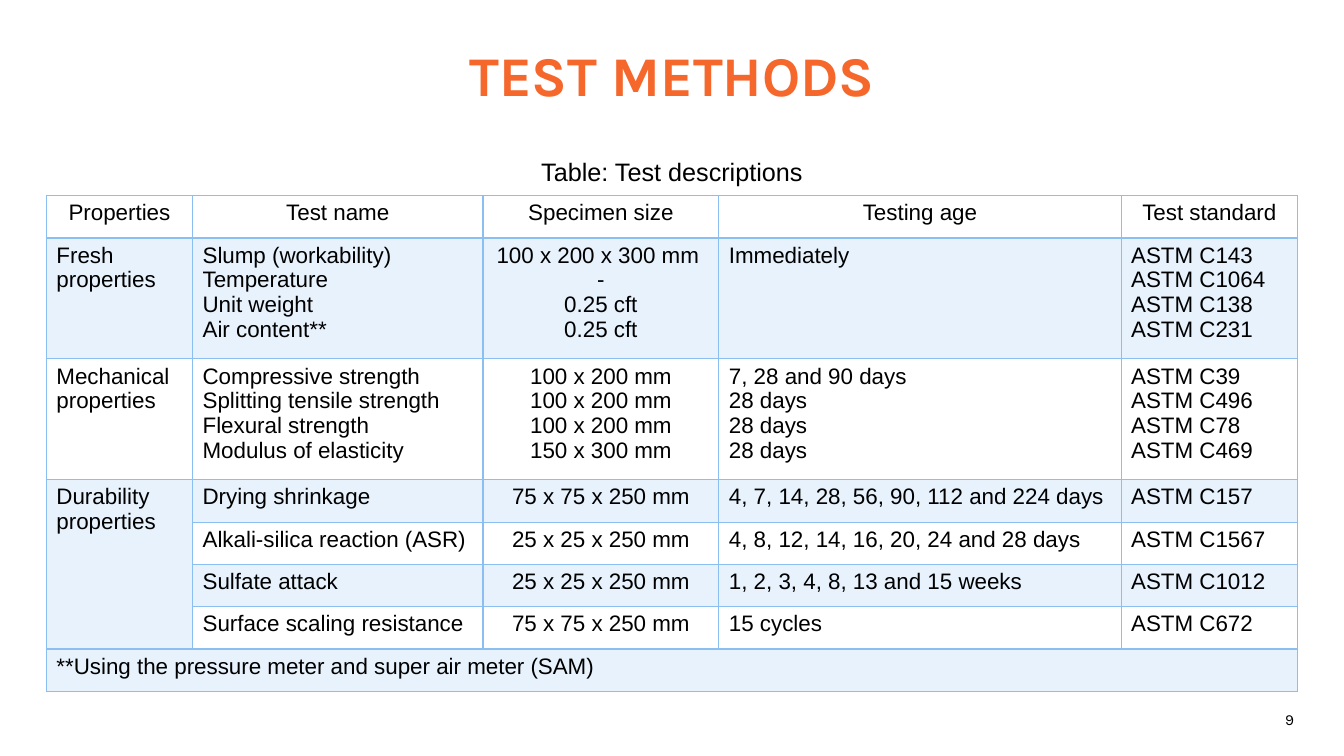
from lxml import etree
from pptx import Presentation
from pptx.dml.color import RGBColor
from pptx.enum.text import MSO_ANCHOR, PP_ALIGN
from pptx.oxml.ns import qn
from pptx.util import Inches, Pt

BLUE = "8BBEF1"


def style(tf, size, font, color="000000", align=PP_ALIGN.CENTER, bold=False):
    tf.word_wrap = True
    for p in tf.paragraphs:
        p.alignment = align
        for r in p.runs:
            r.font.size, r.font.name, r.font.bold = Pt(size), font, bold
            r.font.color.rgb = RGBColor.from_string(color)


def border(cell, sides):
    tcPr = cell._tc.get_or_add_tcPr()
    for i, (side, width) in enumerate(sides.items()):
        ln = etree.Element(qn(f"a:ln{side}"), w=str(Pt(width)))
        fill = etree.SubElement(ln, qn("a:solidFill"))
        etree.SubElement(fill, qn("a:srgbClr"), val=BLUE)
        tcPr.insert(i, ln)


prs = Presentation()
prs.slide_width, prs.slide_height = Inches(13.33), Inches(7.5)
s = prs.slides.add_slide(prs.slide_layouts[5])

# Title
title = s.shapes.title
title.left, title.top = Inches(0), Inches(0.35)
title.width, title.height = Inches(13.33), Inches(0.77)
title.text_frame.text = "TEST METHODS"
title.text_frame.vertical_anchor = MSO_ANCHOR.TOP
style(title.text_frame, 40, "Karla", "F5672B", bold=True)

# Table caption and page number
for text, box, size, font in [
    ("Table: Test descriptions", (0, 1.5, 13.33, 0.4), 18, "Arial"),
    ("9", (12.5, 7, 0.58, 0.29), 11, "Karla"),
]:
    sp = s.shapes.add_textbox(*map(Inches, box))
    sp.text_frame.text = text
    style(sp.text_frame, size, font)

# Test table
rows = [
    ["Properties", "Test name", "Specimen size", "Testing age", "Test standard"],
    ["Fresh\nproperties",
     "Slump (workability)\nTemperature\nUnit weight\nAir content**",
     "100 x 200 x 300 mm \n-\n0.25 cft\n0.25 cft",
     "Immediately",
     "ASTM C143\nASTM C1064\nASTM C138\nASTM C231"],
    ["Mechanical\nproperties",
     "Compressive strength\nSplitting tensile strength\nFlexural strength\nModulus of elasticity",
     "100 x 200 mm\n100 x 200 mm\n100 x 200 mm\n150 x 300 mm",
     "7, 28 and 90 days\n28 days\n28 days\n28 days",
     "ASTM C39\nASTM C496\nASTM C78\nASTM C469"],
    ["Durability\nproperties", "Drying shrinkage", "75 x 75 x 250 mm",
     "4, 7, 14, 28, 56, 90, 112 and 224 days", "ASTM C157"],
    ["", "Alkali-silica reaction (ASR)", "25 x 25 x 250 mm",
     "4, 8, 12, 14, 16, 20, 24 and 28 days", "ASTM C1567"],
    ["", "Sulfate attack", "25 x 25 x 250 mm",
     "1, 2, 3, 4, 8, 13 and 15 weeks", "ASTM C1012"],
    ["", "Surface scaling resistance", "75 x 75 x 250 mm", "15 cycles", "ASTM C672"],
    ["**Using the pressure meter and super air meter (SAM)", "", "", "", ""],
]
tbl = s.shapes.add_table(len(rows), 5, Inches(0.46), Inches(1.94),
                         Inches(12.41), Inches(4.92)).table
tbl.first_row = tbl.horz_banding = False
for col, width in zip(tbl.columns, [1.45, 2.88, 2.34, 3.99, 1.75]):
    col.width = Inches(width)

for i, row in enumerate(rows):
    tbl.rows[i].height = Inches(1.2 if i in (1, 2) else 0.42)
    for j, text in enumerate(row):
        cell = tbl.cell(i, j)
        cell.text_frame.text = text
        centred = i == 0 or j == 2
        style(cell.text_frame, 16, "Arial",
              align=PP_ALIGN.CENTER if centred else PP_ALIGN.LEFT)
        # Odd rows carry a light blue band
        if i % 2:
            cell.fill.solid()
            cell.fill.fore_color.rgb = RGBColor.from_string(BLUE)
            clr = cell._tc.tcPr.find(".//" + qn("a:srgbClr"))
            etree.SubElement(clr, qn("a:alpha"), val="20000")
        else:
            cell.fill.background()
        border(cell, {"L": 1, "R": 1, "T": 2 if i == 1 else 1, "B": 2 if i == 0 else 1})

# Durability group and footnote row
tbl.cell(3, 0).merge(tbl.cell(6, 0))
tbl.cell(7, 0).merge(tbl.cell(7, 4))
tbl.cell(7, 0).text_frame.paragraphs[0].alignment = PP_ALIGN.LEFT

prs.save("out.pptx")
